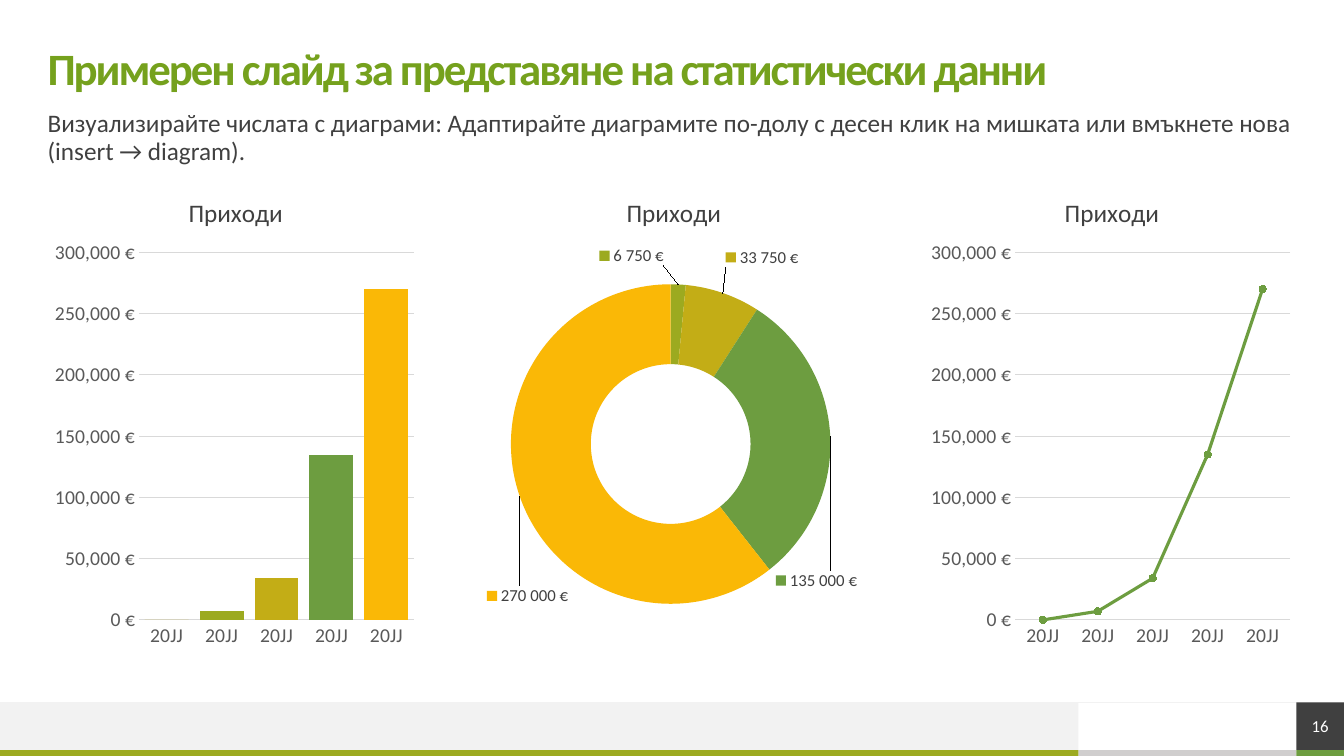
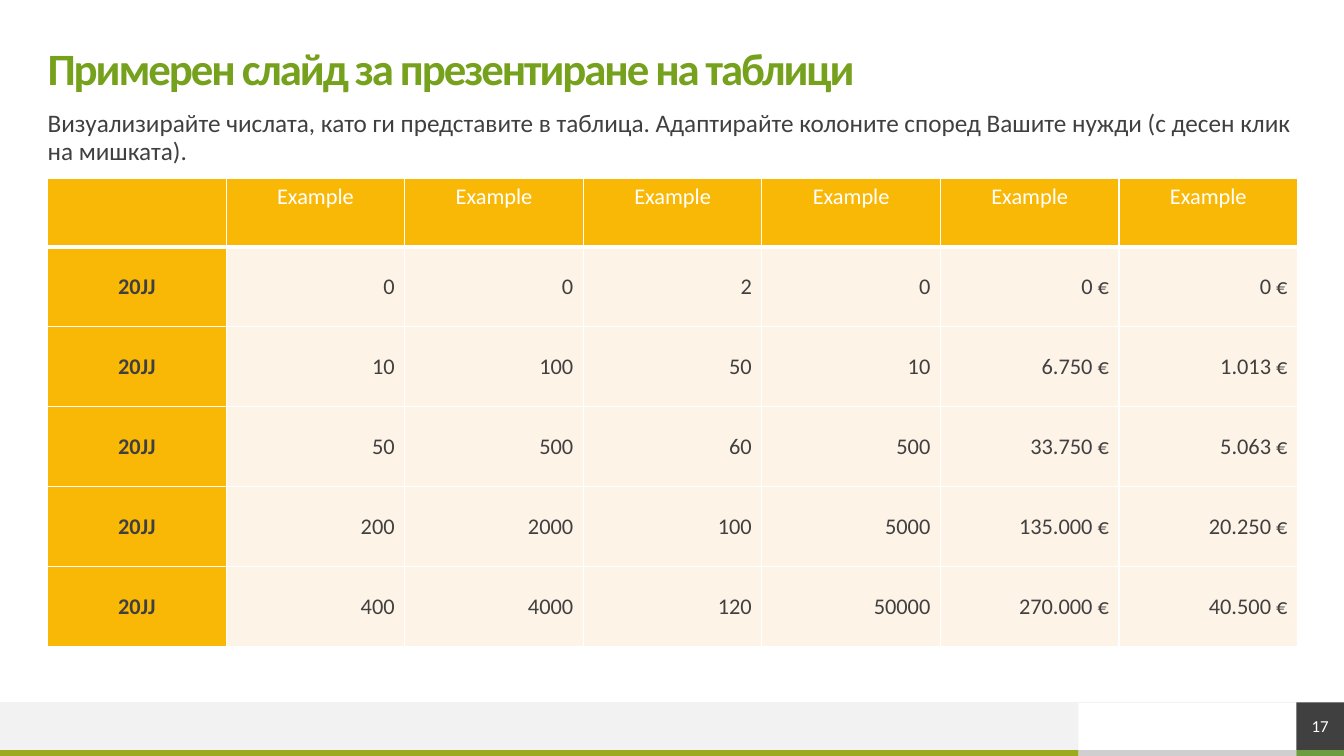
from copy import deepcopy

from pptx import Presentation
from pptx import util as u
from pptx.chart.data import CategoryChartData
from pptx.dml.color import RGBColor
from pptx.enum import chart as ch
from pptx.enum import shapes, text
from pptx.oxml import parse_xml
from pptx.oxml.ns import nsdecls, qn

COLORS = {
    "title": "75A11D", "ink": "404040", "axis": "595959", "grid": "D9D9D9",
    "band": "F2F2F2", "silver": "D0CECE", "white": "FFFFFF", "black": "000000",
    "lime": "9CAA20", "olive": "C3AD16", "green": "6D9D40", "amber": "FAB806",
    "cream": "FEF3E7",
}
FONT = "Calibri"
SLIDE_W, SLIDE_H = 33.87, 19.05
MARGIN, CONTENT_W = 1.2, 31.5
PAGE_BOX = 1.2
BAND_TOP, STRIP_TOP, BAND_W = 17.7, 18.9, 27.18

POINT_COLORS = ["olive", "lime", "olive", "green", "amber"]
YEARS = ["20JJ"] * 5
REVENUE = [0, 7000, 34000, 135000, 270000]
EXACT_REVENUE = [0, 6750, 33750, 135000, 270000]
AXIS_FORMAT = "#,##0\\ [$€-407]"
LABEL_FORMAT = "#\\ ##0\\ [$€-407]"
AXIS_PLOT = (0.245, 0.175, 0.735, 0.75)
RING_PLOT = (0.067, 0.24, 0.856, 0.652)
# Shift of each ring label from its slice, as a share of the chart size
LABEL_SHIFTS = {1: (-0.12, -0.14), 2: (0.14, -0.15), 3: (0.07, 0.29), 4: (-0.08, 0.23)}

TABLE_HEAD = [""] + ["Example"] * 6
TABLE_ROWS = [
    ["20JJ", "0", "0", "2", "0", "0 €", "0 €"],
    ["20JJ", "10", "100", "50", "10", "6.750 €", "1.013 €"],
    ["20JJ", "50", "500", "60", "500", "33.750 €", "5.063 €"],
    ["20JJ", "200", "2000", "100", "5000", "135.000 €", "20.250 €"],
    ["20JJ", "400", "4000", "120", "50000", "270.000 €", "40.500 €"],
]


def rgb(name):
    return RGBColor.from_string(COLORS[name])


def set_format(target, values):
    for attribute, value in values.items():
        setattr(target, attribute, value)


def set_font(font, size, color, bold=False):
    set_format(font, {"name": FONT, "size": u.Pt(size), "bold": bold})
    font.color.rgb = rgb(color)


def fill_with(part, color):
    part.fill.solid()
    part.fill.fore_color.rgb = rgb(color)


def set_line(line, color, width):
    line.color.rgb = rgb(color)
    line.width = u.Pt(width)


def add_rectangle(slide, box, color):
    rectangle = slide.shapes.add_shape(
        shapes.MSO_SHAPE.RECTANGLE, *(u.Cm(n) for n in box))
    rectangle.shadow.inherit = False
    fill_with(rectangle, color)
    rectangle.line.fill.background()
    return rectangle


def write_text(shape, content, size, color, bold=False, align=text.PP_ALIGN.LEFT,
               anchor=text.MSO_ANCHOR.TOP, spacing=0.9):
    frame = shape.text_frame
    set_format(frame, {"margin_left": 0, "margin_right": 0, "margin_top": 0,
                       "margin_bottom": 0, "word_wrap": True,
                       "vertical_anchor": anchor})
    paragraph = frame.paragraphs[0]
    set_format(paragraph, {"alignment": align, "line_spacing": spacing})
    run = paragraph.add_run()
    run.text = content
    set_font(run.font, size, color, bold)


def add_footer(slide, page):
    page_left = SLIDE_W - PAGE_BOX
    strip_h = SLIDE_H - STRIP_TOP
    band_h = STRIP_TOP - BAND_TOP
    add_rectangle(slide, (BAND_W, STRIP_TOP, page_left - BAND_W, strip_h), "silver")
    add_rectangle(slide, (0, BAND_TOP, BAND_W, band_h), "band")
    add_rectangle(slide, (0, STRIP_TOP, BAND_W, strip_h), "lime")
    add_rectangle(slide, (page_left, STRIP_TOP, PAGE_BOX, strip_h), "green")
    rule = slide.shapes.add_connector(
        shapes.MSO_CONNECTOR.STRAIGHT, u.Cm(SLIDE_W), u.Cm(BAND_TOP), 0, u.Cm(BAND_TOP))
    set_line(rule.line, "band", 0.5)
    rule.element.spPr.append(parse_xml(f"<a:effectLst {nsdecls('a')}/>"))
    number = add_rectangle(slide, (page_left, BAND_TOP, PAGE_BOX, band_h), "ink")
    write_text(number, str(page), 12, "white", align=text.PP_ALIGN.CENTER,
               anchor=text.MSO_ANCHOR.MIDDLE, spacing=1.0)


def add_framed_slide(deck, page, title, intro):
    """Add a blank slide with title, introduction and footer."""
    slide = deck.slides.add_slide(deck.slide_layouts[6])
    add_footer(slide, page)
    heading = slide.shapes.add_textbox(*map(u.Cm, (MARGIN, 1.2, CONTENT_W, 1.2)))
    write_text(heading, title, 32, "title", bold=True, anchor=text.MSO_ANCHOR.MIDDLE)
    for properties in heading.element.iter(qn("a:rPr")):
        properties.set("spc", "-150")
    introduction = slide.shapes.add_textbox(*map(u.Cm, (MARGIN, 2.8, CONTENT_W, 1.4)))
    write_text(introduction, intro, 18, "ink")
    return slide


def layout_xml(places, inner=False, fixed=True):
    """Return a manual chart layout; places holds x, y and perhaps w, h."""
    target = '<c:layoutTarget val="inner"/>' if inner else ""
    modes = '<c:xMode val="edge"/><c:yMode val="edge"/>' if fixed else ""
    values = "".join(f'<c:{key} val="{n}"/>' for key, n in zip("xywh", places))
    return parse_xml(f"<c:layout {nsdecls('c')}><c:manualLayout>{target}{modes}"
                     f"{values}</c:manualLayout></c:layout>")


def replace_layout(parent, index, layout):
    for old in parent.findall(qn("c:layout")):
        parent.remove(old)
    parent.insert(index, layout)


def add_revenue_chart(slide, box, kind, categories, values, plot_place):
    data = CategoryChartData()
    data.categories = categories
    data.add_series("Series 1", values)
    chart = slide.shapes.add_chart(kind, *(u.Cm(n) for n in box), data).chart
    set_font(chart.font, 10, "black")
    set_format(chart, {"has_legend": False, "has_title": True})
    caption = chart.chart_title.text_frame.paragraphs[0].add_run()
    caption.text = "Приходи"
    set_font(caption.font, 18, "ink")
    root = chart.element
    replace_layout(root.find(".//" + qn("c:title")), 1, layout_xml((0.365, 0.05)))
    replace_layout(root.find(".//" + qn("c:plotArea")), 0,
                   layout_xml(plot_place, inner=True))
    return chart


def style_axes(chart):
    years, amounts = chart.category_axis, chart.value_axis
    for axis in (years, amounts):
        set_format(axis, {"major_tick_mark": ch.XL_TICK_MARK.NONE,
                          "minor_tick_mark": ch.XL_TICK_MARK.NONE})
        set_font(axis.tick_labels.font, 14, "axis")
    set_line(years.format.line, "grid", 0.75)
    set_format(amounts, {"minimum_scale": 0, "maximum_scale": 300000,
                         "major_unit": 50000, "has_major_gridlines": True})
    set_format(amounts.tick_labels, {"number_format": AXIS_FORMAT,
                                     "number_format_is_linked": False})
    set_line(amounts.major_gridlines.format.line, "grid", 0.75)
    amounts.format.line.fill.background()


def color_points(series):
    for index, color in enumerate(POINT_COLORS):
        point = series.points[index].format
        fill_with(point, color)
        point.line.fill.background()


def add_column_chart(slide, box):
    chart = add_revenue_chart(slide, box, ch.XL_CHART_TYPE.COLUMN_CLUSTERED,
                              YEARS, REVENUE, AXIS_PLOT)
    style_axes(chart)
    set_format(chart.plots[0], {"gap_width": 25, "vary_by_categories": False})
    color_points(chart.plots[0].series[0])


def add_ring_chart(slide, box):
    chart = add_revenue_chart(slide, box, ch.XL_CHART_TYPE.DOUGHNUT,
                              "12345", EXACT_REVENUE, RING_PLOT)
    series = chart.plots[0].series[0]
    color_points(series)
    labels = series.data_labels
    set_format(labels, {"show_value": True, "show_legend_key": True,
                        "show_percentage": False, "number_format": LABEL_FORMAT,
                        "number_format_is_linked": False})
    set_font(labels.font, 12, "ink")
    place_ring_labels(series.data_labels._element)


def place_ring_labels(labels):
    """Hide the label of the empty slice and shift the others outwards."""
    shared = [labels.find(qn(tag)) for tag in ("c:numFmt", "c:txPr")]
    flags = {"LegendKey": 1, "Val": 1, "CatName": 0, "SerName": 0,
             "Percent": 0, "BubbleSize": 0}
    for index in range(len(EXACT_REVENUE)):
        label = parse_xml(f"<c:dLbl {nsdecls('c')}><c:idx val=\"{index}\"/></c:dLbl>")
        if index in LABEL_SHIFTS:
            label.append(layout_xml(LABEL_SHIFTS[index], fixed=False))
            label.extend(deepcopy(part) for part in shared)
            settings = {f"show{key}": value for key, value in flags.items()}
        else:
            settings = {"delete": 1}
        for tag, value in settings.items():
            label.append(parse_xml(f"<c:{tag} {nsdecls('c')} val=\"{value}\"/>"))
        labels.insert(index, label)


def add_line_chart(slide, box):
    chart = add_revenue_chart(slide, box, ch.XL_CHART_TYPE.LINE_MARKERS_STACKED,
                              YEARS, REVENUE, AXIS_PLOT)
    style_axes(chart)
    chart.plots[0].vary_by_categories = False
    series = chart.plots[0].series[0]
    series.smooth = False
    set_line(series.format.line, "green", 2.25)
    set_format(series.marker, {"style": ch.XL_MARKER_STYLE.CIRCLE, "size": 5})
    fill_with(series.marker.format, "green")
    set_line(series.marker.format.line, "green", 0.75)


def add_chart_row(slide, left, top, width, height):
    chart_w = 9.42
    step = (width - chart_w) / 2
    for column, add in enumerate((add_column_chart, add_ring_chart, add_line_chart)):
        add(slide, (left + column * step, top, chart_w, height))


def set_borders(cell, bottom):
    properties = cell._tc.get_or_add_tcPr()
    for side, width in {"L": 1, "R": 1, "T": 1, "B": bottom}.items():
        properties.append(parse_xml(
            f"<a:ln{side} {nsdecls('a')} w=\"{u.Pt(width)}\"><a:solidFill>"
            f"<a:srgbClr val=\"{COLORS['white']}\"/></a:solidFill></a:ln{side}>"))


def fill_cell(cell, content, row, column):
    is_head, is_label = row == 0, column == 0
    set_borders(cell, 3 if is_head else 1)
    fill_with(cell, "amber" if is_head or is_label else "cream")
    anchor = text.MSO_ANCHOR.TOP if is_head else text.MSO_ANCHOR.MIDDLE
    cell.vertical_anchor = anchor
    if content:
        cell.text = content
        paragraph = cell.text_frame.paragraphs[0]
        centred = is_head or is_label
        paragraph.alignment = text.PP_ALIGN.CENTER if centred else text.PP_ALIGN.RIGHT
        set_font(paragraph.runs[0].font, 16, "white" if is_head else "ink",
                 bold=is_label)


def add_figures_table(slide, left, top, width, height):
    rows = [TABLE_HEAD] + TABLE_ROWS
    head_h = 1.72
    table = slide.shapes.add_table(
        len(rows), len(TABLE_HEAD), *map(u.Cm, (left, top, width, height))).table
    table.horz_banding = False
    for column in table.columns:
        column.width = u.Cm(width / len(TABLE_HEAD))
    for r, contents in enumerate(rows):
        table.rows[r].height = u.Cm((height - head_h) / len(TABLE_ROWS) if r else head_h)
        for c, content in enumerate(contents):
            fill_cell(table.cell(r, c), content, r, c)


def main():
    deck = Presentation()
    set_format(deck, {"slide_width": u.Cm(SLIDE_W), "slide_height": u.Cm(SLIDE_H)})
    charts = add_framed_slide(
        deck, 16, "Примерен слайд за представяне на статистически данни",
        "Визуализирайте числата с диаграми: Адаптирайте диаграмите по-долу с десен "
        "клик на мишката или вмъкнете нова (insert → diagram).")
    add_chart_row(charts, MARGIN, 4.2, CONTENT_W, 12.35)
    figures = add_framed_slide(
        deck, 17, "Примерен слайд за презентиране на таблици",
        "Визуализирайте числата, като ги представите в таблица. Адаптирайте колоните "
        "според Вашите нужди (с десен клик на мишката).")
    add_figures_table(figures, MARGIN, 4.5, CONTENT_W, 11.8)
    deck.save("out.pptx")


if __name__ == "__main__":
    main()
